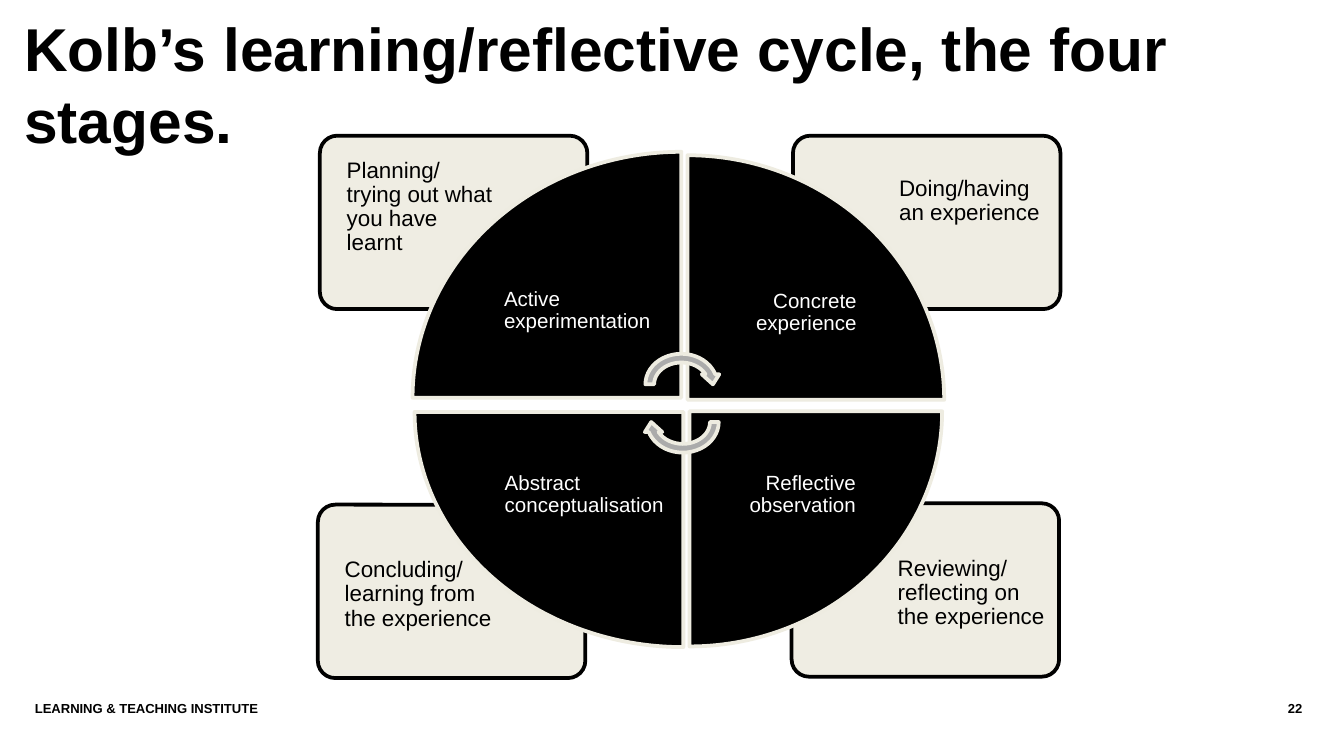
import pptx
import pptx.dml.color
import pptx.enum.shapes
import pptx.enum.text
import pptx.oxml.ns
import pptx.util
from lxml import etree

PX = 4572  # EMU per px: 200 px to the inch
BLACK, WHITE, CREAM, GREY = "000000", "FFFFFF", "EEECE1", "ABABAB"
SHAPE = pptx.enum.shapes.MSO_SHAPE
ALIGN = pptx.enum.text.PP_ALIGN
ANCHOR = pptx.enum.text.MSO_ANCHOR


def emu(*lengths):
    return [pptx.util.Emu(round(length * PX)) for length in lengths]


def color(code):
    return pptx.dml.color.RGBColor.from_string(code)


def add_figure(page, kind, box, fill, line, turn=0):
    figure = page.shapes.add_shape(kind, *emu(*box))
    figure.shadow.inherit = False
    figure.fill.solid()
    figure.fill.fore_color.rgb = color(fill)
    figure.line.color.rgb = color(line)
    figure.line.width = pptx.util.Pt(2)
    figure.rotation = turn
    return figure


def add_text(page, box, text, size, ink=BLACK, bold=False, align=ALIGN.LEFT,
             anchor=ANCHOR.TOP, inset=0, indent=0, spacing=1.0):
    frame = page.shapes.add_textbox(*emu(*box)).text_frame
    frame.word_wrap = True
    frame.vertical_anchor = anchor
    frame.margin_left, frame.margin_top, frame.margin_right, frame.margin_bottom = emu(*[inset] * 4)
    para = frame.paragraphs[0]
    para.alignment = align
    para.line_spacing = spacing
    if indent:
        para._p.get_or_add_pPr().set("marL", str(indent * PX))
    span = para.add_run()
    span.text = text
    span.font.name = "Arial"
    span.font.size = pptx.util.Pt(size)
    span.font.bold = bold
    span.font.color.rgb = color(ink)


def add_callout(page, box, on_right, on_bottom, anchor, text):
    """Rounded card whose text sits near the card's outer corner."""
    left, top, width, height = box
    card = add_figure(page, SHAPE.ROUNDED_RECTANGLE, box, CREAM, BLACK)
    card.adjustments[0] = 0.1
    tint = card.fill._xPr.find(".//" + pptx.oxml.ns.qn("a:srgbClr"))
    etree.SubElement(tint, pptx.oxml.ns.qn("a:alpha")).set("val", "90000")

    text_width, text_height, gap = 268, 182, 6
    x = left + (width - text_width - gap if on_right else gap)
    y = top + (height - text_height - gap if on_bottom else gap)
    add_text(page, (x, y, text_width, text_height), text, 12,
             anchor=anchor, inset=10, indent=24, spacing=0.9)


def add_quadrant(page, box, on_right, on_bottom, label_size, text):
    """Quarter of the cycle, labelled at the corner nearest the centre."""
    left, top, width, height = box
    turn = {(0, 0): 0, (1, 0): 90, (1, 1): 180, (0, 1): 270}[on_right, on_bottom]
    # A quarter turn swaps the sides about the same centre
    w, h = (height, width) if turn % 180 else (width, height)
    wedge_box = (left + (width - w) / 2, top + (height - h) / 2, w, h)
    add_figure(page, SHAPE.PIE_WEDGE, wedge_box, BLACK, CREAM, turn)

    label_width, label_height = label_size
    x = left if on_right else left + width - label_width
    y = top if on_bottom else top + height - label_height
    add_text(page, (x, y, label_width, label_height), text, 11, WHITE,
             align=ALIGN.RIGHT if on_right else ALIGN.LEFT,
             anchor=ANCHOR.MIDDLE, inset=18, spacing=0.9)


def add_cycle(page, box):
    """Four callouts, four quadrants and the two arrows in the middle."""
    left, top = box[:2]

    def place(x, y, width, height):
        return left + x, top + y, width, height

    callouts = [
        ((706, 547), 1, 1, ANCHOR.TOP, "Reviewing/ reflecting on the experience"),
        ((1, 549), 0, 1, ANCHOR.TOP, "Concluding/ learning from the experience"),
        ((708, 0), 1, 0, ANCHOR.MIDDLE, "Doing/having an experience"),
        ((4, 0), 0, 0, ANCHOR.BOTTOM, "Planning/ trying out what you have learnt"),
    ]
    for spot, on_right, on_bottom, anchor, text in callouts:
        add_callout(page, place(*spot, 398, 258), on_right, on_bottom, anchor, text)

    quadrants = [
        ((142, 24, 400, 366), 0, 0, (282, 258), "Active experimentation"),
        ((551, 29, 382, 364), 1, 0, (270, 258), "Concrete experience"),
        ((554, 410, 376, 350), 1, 1, (266, 248), "Reflective observation"),
        ((145, 411, 400, 350), 0, 1, (284, 248), "Abstract conceptualisation"),
    ]
    for spot, on_right, on_bottom, label_size, text in quadrants:
        add_quadrant(page, place(*spot), on_right, on_bottom, label_size, text)

    for x, y, turn in [(482, 318, 0), (484, 374, 180)]:
        add_figure(page, SHAPE.CIRCULAR_ARROW, place(x, y, 120, 104), GREY, CREAM, turn)


def add_footer(page, box):
    left, top, width, height = box
    number_width = 198
    add_text(page, (left, top, 1682, height), "LEARNING & TEACHING INSTITUTE", 7, bold=True)
    add_text(page, (left + width - number_width, top, number_width, height),
             "22", 7, bold=True, align=ALIGN.RIGHT)


def main():
    deck = pptx.Presentation()
    deck.slide_width, deck.slide_height = emu(2000, 1125)
    page = deck.slides.add_slide(deck.slide_layouts[6])

    # Title
    add_text(page, (36, 16, 1846, 152), "Kolb’s learning/reflective cycle, the four stages.",
             32.4, bold=True)
    add_cycle(page, (472, 202, 1106, 806))
    add_footer(page, (52, 1042, 1886, 60))
    deck.save("out.pptx")


if __name__ == "__main__":
    main()
